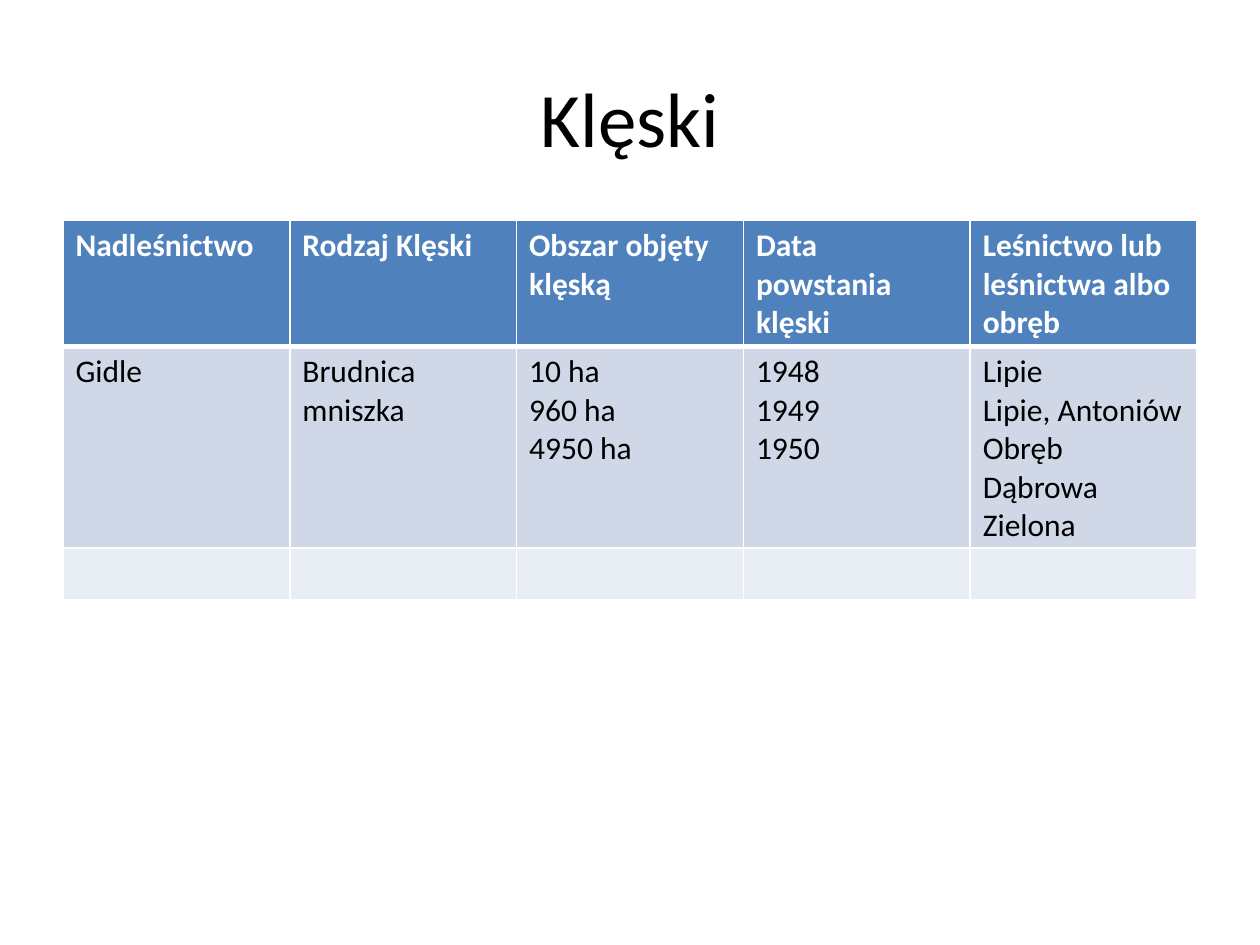
"""Build the slide listing forest disasters in a table."""
from dataclasses import dataclass

import lxml.etree
import pptx
import pptx.dml.color
import pptx.enum.text
import pptx.oxml.ns
import pptx.util

EMU_PER_PX = 9144
FONT = "Calibri"
COLORS = {
    "black": "000000",
    "white": "FFFFFF",
    "header": "4F81BD",
    "band_dark": "D0D8E8",
    "band_light": "E9EDF4",
}


@dataclass(frozen=True)
class TableRow:
    """Cell texts and look of one table row."""

    texts: tuple[str, ...]
    fill: str
    color: str = "black"
    bold: bool = False
    top: int = 1
    bottom: int = 1


ROWS = (
    TableRow(
        (
            "Nadleśnictwo",
            "Rodzaj Klęski",
            "Obszar objęty klęską",
            "Data powstania klęski",
            "Leśnictwo lub leśnictwa albo obręb",
        ),
        "header", "white", bold=True, bottom=3,
    ),
    TableRow(
        (
            "Gidle",
            "Brudnica mniszka",
            "10 ha\n960 ha\n4950 ha",
            "1948\n1949\n1950",
            "Lipie\nLipie, Antoniów\nObręb Dąbrowa Zielona",
        ),
        "band_dark", top=3,
    ),
    TableRow(("",) * 5, "band_light"),
)


def px(length: int) -> pptx.util.Emu:
    """Turn px into EMU."""
    return pptx.util.Emu(length * EMU_PER_PX)


def rgb(name: str) -> pptx.dml.color.RGBColor:
    """Look up a named colour."""
    return pptx.dml.color.RGBColor.from_string(COLORS[name])


def format_runs(text_frame, size: int, color: str, bold: bool = False) -> None:
    """Give every run of a text frame the same font."""
    for paragraph in text_frame.paragraphs:
        for run in paragraph.runs:
            run.font.name = FONT
            run.font.size = pptx.util.Pt(size)
            run.font.bold = bold
            run.font.color.rgb = rgb(color)


def add_borders(cell, widths: dict[str, int]) -> None:
    """Draw white cell borders, with widths in points by side."""
    qn = pptx.oxml.ns.qn
    properties = cell._tc.get_or_add_tcPr()
    for index, (side, width) in enumerate(widths.items()):
        line = lxml.etree.Element(qn(f"a:ln{side}"), w=str(pptx.util.Pt(width)))
        fill = lxml.etree.SubElement(line, qn("a:solidFill"))
        lxml.etree.SubElement(fill, qn("a:srgbClr"), val=COLORS["white"])
        properties.insert(index, line)


def add_title(slide, text: str) -> None:
    """Add the centred slide title."""
    shape = slide.shapes.add_textbox(px(50), px(30), px(900), px(125))
    text_frame = shape.text_frame
    text_frame.word_wrap = True
    text_frame.vertical_anchor = pptx.enum.text.MSO_ANCHOR.MIDDLE
    text_frame.text = text
    text_frame.paragraphs[0].alignment = pptx.enum.text.PP_ALIGN.CENTER
    format_runs(text_frame, 44, "black")


def add_disaster_table(slide, rows: tuple[TableRow, ...]) -> None:
    """Add the table with equal columns and rows that grow with their text."""
    shape = slide.shapes.add_table(
        len(rows), len(rows[0].texts), px(50), px(175), px(900), px(301)
    )
    table = shape.table
    for row_index, row in enumerate(rows):
        table.rows[row_index].height = px(41)
        for column_index, text in enumerate(row.texts):
            cell = table.cell(row_index, column_index)
            cell.text_frame.text = text
            format_runs(cell.text_frame, 18, row.color, row.bold)
            cell.fill.solid()
            cell.fill.fore_color.rgb = rgb(row.fill)
            add_borders(cell, {"L": 1, "R": 1, "T": row.top, "B": row.bottom})
    shape.height = px(301)


def main() -> None:
    """Build and save the presentation."""
    presentation = pptx.Presentation()
    presentation.slide_width = px(1000)
    presentation.slide_height = px(750)
    slide = presentation.slides.add_slide(presentation.slide_layouts[6])
    add_title(slide, "Klęski")
    add_disaster_table(slide, ROWS)
    presentation.save("out.pptx")


if __name__ == "__main__":
    main()
